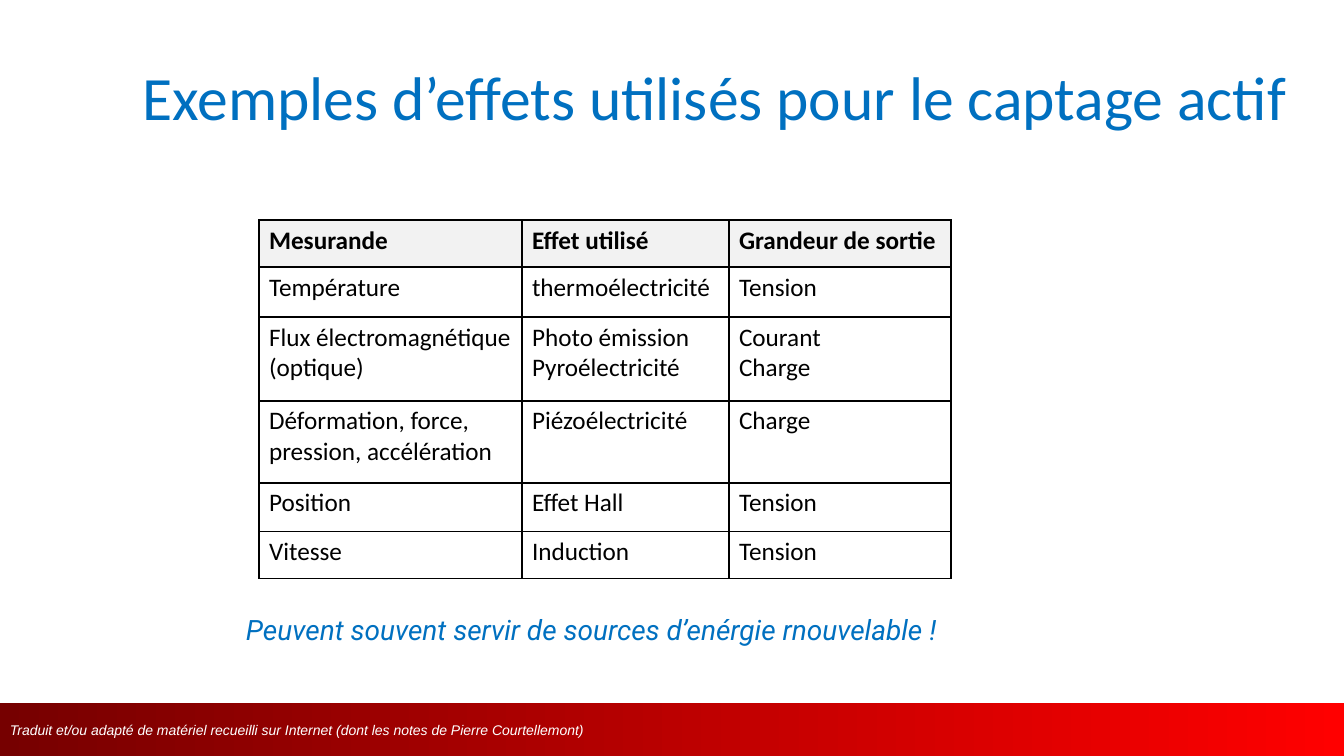
"""Build the slide listing the effects used for active sensing."""
import pptx
import pptx.util
import pptx.dml.color
import pptx.enum.shapes
import pptx.enum.text
import pptx.oxml
import pptx.oxml.ns

TITLE = "Exemples d’effets utilisés pour le captage actif"
EFFECTS = [
    ("Mesurande", "Effet utilisé", "Grandeur de sortie"),
    ("Température", "thermoélectricité", "Tension"),
    ("Flux électromagnétique (optique)", "Photo émission\nPyroélectricité", "Courant\nCharge"),
    ("Déformation, force, pression, accélération", "Piézoélectricité", "Charge"),
    ("Position", "Effet Hall", "Tension"),
    ("Vitesse", "Induction", "Tension"),
]
REMARK = "Peuvent souvent servir de sources d’enérgie rnouvelable !"
CREDIT = ("Traduit et/ou adapté de matériel recueilli sur Internet "
          "(dont les notes de Pierre Courtellemont)")

COLORS = {"blue": "0070C0", "black": "000000", "white": "FFFFFF", "header": "F2F2F2",
          "dark_red": "760000", "red": "FF0000"}
FORMATS = {
    "title": {"name": "Calibri", "size": 44},
    "header": {"name": "Calibri", "size": 18, "bold": True},
    "body": {"name": "Calibri", "size": 18, "bold": False},
    "remark": {"name": "Roboto", "size": 20, "italic": True},
    "credit": {"name": "Arial", "size": 10, "italic": True},
}
SLIDE_SIZE = (1344, 756)
TITLE_BOX = (116, 36, 1198, 120)
REMARK_BOX = (236, 608, 757, 44)
FOOTER_BOX = (0, 703, 1344, 53)
TABLE_ORIGIN = (259, 220)
COLUMN_WIDTHS = (263, 207, 222)
ROW_HEIGHTS = (47, 50, 84, 82, 49, 47)
BORDER_WIDTH = 12700


def px(length):
    return pptx.util.Emu(round(length * 914400 / 100.8))


def rgb(color):
    return pptx.dml.color.RGBColor.from_string(COLORS[color])


def write(frame, text, style, color, align="LEFT", anchor="TOP"):
    frame.word_wrap = True
    frame.vertical_anchor = pptx.enum.text.MSO_ANCHOR[anchor]
    frame.text = text
    for paragraph in frame.paragraphs:
        paragraph.alignment = pptx.enum.text.PP_ALIGN[align]
        for run in paragraph.runs:
            run.font.color.rgb = rgb(color)
            for attribute, value in FORMATS[style].items():
                setattr(run.font, attribute,
                        pptx.util.Pt(value) if attribute == "size" else value)


def add_borders(cell):
    properties = cell._tc.get_or_add_tcPr()
    for position, side in enumerate(("lnL", "lnR", "lnT", "lnB")):
        properties.insert(position, pptx.oxml.parse_xml(
            f'<a:{side} {pptx.oxml.ns.nsdecls("a")} w="{BORDER_WIDTH}"><a:solidFill>'
            f'<a:srgbClr val="{COLORS["black"]}"/></a:solidFill></a:{side}>'))


def add_footer(slide):
    footer = slide.shapes.add_shape(pptx.enum.shapes.MSO_SHAPE.RECTANGLE, *map(px, FOOTER_BOX))
    footer.shadow.inherit = False
    footer.line.fill.background()
    footer.fill.gradient()
    footer.fill.gradient_angle = 0
    for stop, color in zip(footer.fill.gradient_stops, ("dark_red", "red")):
        stop.color.rgb = rgb(color)
    write(footer.text_frame, CREDIT, "credit", "white", anchor="MIDDLE")


def add_effects(slide):
    extent = (sum(COLUMN_WIDTHS), sum(ROW_HEIGHTS))
    effects = slide.shapes.add_table(len(ROW_HEIGHTS), len(COLUMN_WIDTHS),
                                     *map(px, TABLE_ORIGIN + extent)).table
    effects.horz_banding = False
    for column, width in zip(effects.columns, COLUMN_WIDTHS):
        column.width = px(width)
    for r, (height, entries) in enumerate(zip(ROW_HEIGHTS, EFFECTS)):
        effects.rows[r].height = px(height)
        style = "body" if r else "header"
        for c, entry in enumerate(entries):
            cell = effects.cell(r, c)
            if r:
                cell.fill.background()
            else:
                cell.fill.solid()
                cell.fill.fore_color.rgb = rgb("header")
            write(cell.text_frame, entry, style, "black")
            add_borders(cell)


def main():
    deck = pptx.Presentation()
    deck.slide_width, deck.slide_height = map(px, SLIDE_SIZE)
    slide = deck.slides.add_slide(deck.slide_layouts[6])
    add_footer(slide)
    title = slide.shapes.add_textbox(*map(px, TITLE_BOX))
    write(title.text_frame, TITLE, "title", "blue", align="CENTER", anchor="MIDDLE")
    add_effects(slide)
    remark = slide.shapes.add_textbox(*map(px, REMARK_BOX))
    write(remark.text_frame, REMARK, "remark", "blue")
    deck.save("out.pptx")


if __name__ == "__main__":
    main()
